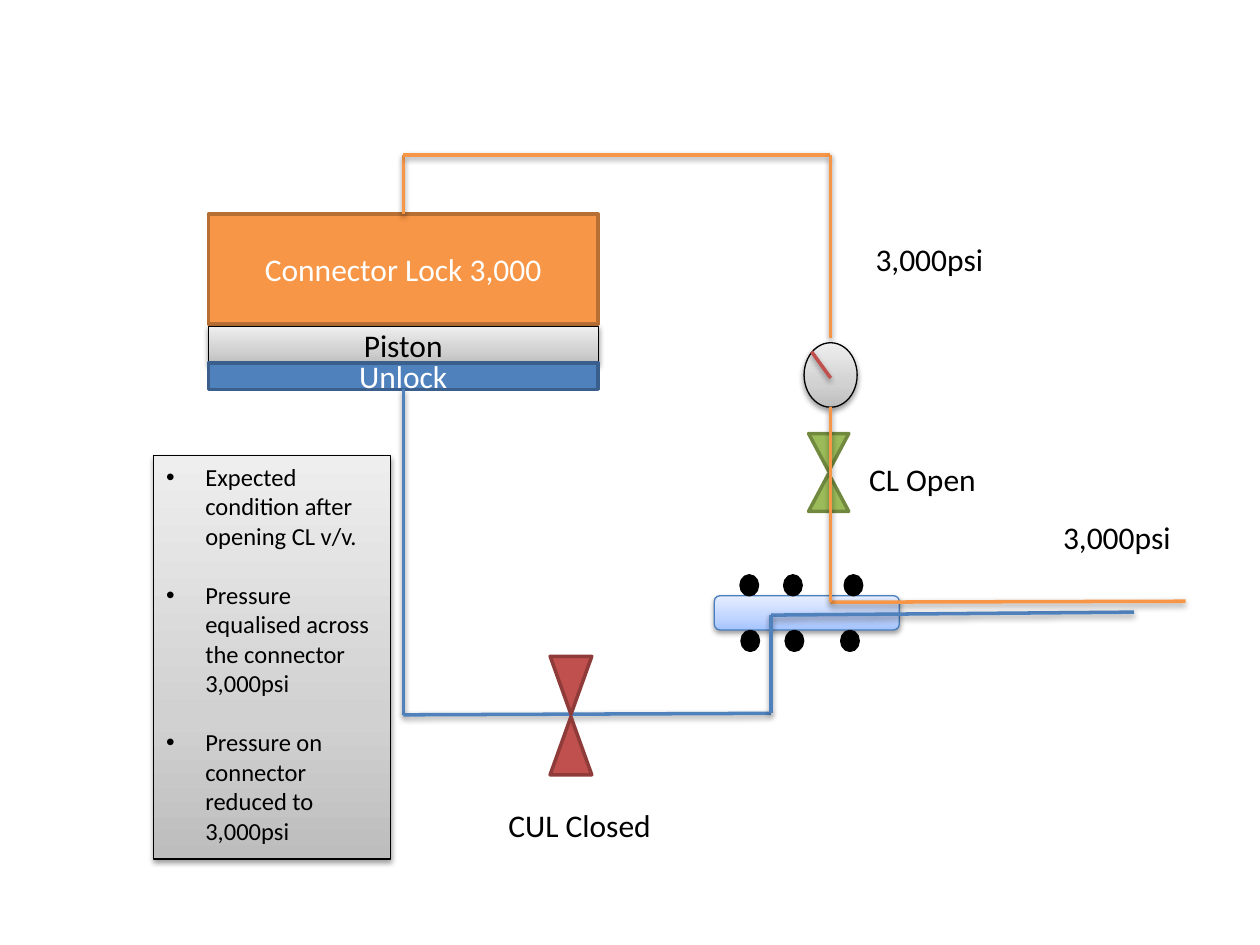
from lxml import etree
from pptx import Presentation
from pptx.dml.color import RGBColor
from pptx.enum.shapes import MSO_CONNECTOR, MSO_SHAPE
from pptx.enum.text import MSO_ANCHOR, MSO_AUTO_SIZE, PP_ALIGN
from pptx.oxml import parse_xml
from pptx.oxml.ns import qn
from pptx.util import Cm, Pt

RECTANGLE, ROUNDED = MSO_SHAPE.RECTANGLE, MSO_SHAPE.ROUNDED_RECTANGLE
ELLIPSE, TRIANGLE = MSO_SHAPE.OVAL, MSO_SHAPE.ISOSCELES_TRIANGLE
STRAIGHT = MSO_CONNECTOR.STRAIGHT
LEFT, CENTER = PP_ALIGN.LEFT, PP_ALIGN.CENTER
TOP, MIDDLE = MSO_ANCHOR.TOP, MSO_ANCHOR.MIDDLE
TOP_SIDE, BOTTOM_SIDE = 0, 2
FONT = "Calibri"
NAMESPACE = 'xmlns:a="http://schemas.openxmlformats.org/drawingml/2006/main"'

COLORS = {
    "black": "000000", "white": "FFFFFF",
    "lock": "F79646", "lock_edge": "B76F34",
    "unlock": "4F81BD", "unlock_edge": "3A5F8C",
    "open": "9BBB59", "open_edge": "71893F",
    "closed": "C0504D", "closed_edge": "8E3B39",
    "manifold_edge": "4B7EBC",
}
# Gradient stops at 0, 35 and 100 percent, running upwards
GRADIENTS = {
    "metal": ("BDBDBD", "D1D1D1", "EEEEEE"),
    "pale_blue": ("A4C4FF", "BFD4FF", "E6EEFF"),
}


def rgb(name):
    return RGBColor.from_string(COLORS[name])


def add_shadow(shape):
    properties = shape._element.spPr
    effects = properties.find(qn("a:effectLst"))
    if effects is None:
        effects = etree.SubElement(properties, qn("a:effectLst"))
    effects.append(parse_xml(
        f'<a:outerShdw {NAMESPACE} blurRad="40000" dist="20000" dir="5400000" '
        'rotWithShape="0"><a:srgbClr val="000000"><a:alpha val="38000"/>'
        '</a:srgbClr></a:outerShdw>'))


def fill_gradient(shape, name):
    stops = "".join(
        f'<a:gs pos="{position}"><a:srgbClr val="{color}"/></a:gs>'
        for position, color in zip((0, 35000, 100000), GRADIENTS[name]))
    shape._element.spPr.find(qn("a:prstGeom")).addnext(parse_xml(
        f'<a:gradFill {NAMESPACE} rotWithShape="1"><a:gsLst>{stops}</a:gsLst>'
        '<a:lin ang="16200000" scaled="0"/></a:gradFill>'))


def add_part(slide, kind, box, fill, edge, line_width=2):
    """Add a shape; gradient-filled parts also cast a shadow."""
    shape = slide.shapes.add_shape(kind, *map(Cm, box))
    shape.shadow.inherit = False
    shape.line.color.rgb = rgb(edge)
    shape.line.width = Pt(line_width)
    if fill in GRADIENTS:
        fill_gradient(shape, fill)
        add_shadow(shape)
    else:
        shape.fill.solid()
        shape.fill.fore_color.rgb = rgb(fill)
    return shape


def add_line(slide, start, end, color):
    line = slide.shapes.add_connector(STRAIGHT, *map(Cm, (*start, *end)))
    line.line.color.rgb = rgb(color)
    line.line.width = Pt(2)
    add_shadow(line)
    return line


def add_pipe(slide, points, color):
    return [add_line(slide, start, end, color)
            for start, end in zip(points, points[1:])]


def write(paragraph, text, size=18, color="black", alignment=LEFT):
    paragraph.alignment = alignment
    run = paragraph.add_run()
    run.text = text
    run.font.name = FONT
    run.font.size = Pt(size)
    run.font.color.rgb = rgb(color)


def add_label(slide, left, top, text, alignment=LEFT):
    frame = slide.shapes.add_textbox(Cm(left), Cm(top), Cm(4.11), Cm(1.02)).text_frame
    frame.word_wrap = True
    frame.auto_size = MSO_AUTO_SIZE.SHAPE_TO_FIT_TEXT
    write(frame.paragraphs[0], text, alignment=alignment)


def add_stack(slide, left, top, width):
    """Lock chamber, piston and unlock chamber, from the top down."""
    layers = (
        ("Connector Lock 3,000", 0, 2.21, "lock", "lock_edge", 2, "white"),
        ("Piston", 2.26, 0.76, "metal", "black", 0.75, "black"),
        ("Unlock", 3, 0.53, "unlock", "unlock_edge", 2, "white"),
    )
    parts = []
    for text, offset, height, fill, edge, line_width, color in layers:
        part = add_part(slide, RECTANGLE, (left, top + offset, width, height),
                        fill, edge, line_width)
        part.text_frame.vertical_anchor = MIDDLE
        write(part.text_frame.paragraphs[0], text, color=color, alignment=CENTER)
        parts.append(part)
    return parts[0], parts[-1]


def add_gauge(slide, left, top, width, height):
    add_part(slide, ELLIPSE, (left, top, width, height), "metal", "black", 0.75)
    add_line(slide, (left + width / 2, top + 0.71), (left + 0.15, top + 0.18), "closed")


def add_valve(slide, left, top, width, height, state):
    """Two triangles that meet tip to tip."""
    half = (height - 0.05) / 2
    for offset, rotation in ((0, 180), (height - half, 0)):
        triangle = add_part(slide, TRIANGLE, (left, top + offset, width, half),
                            state, state + "_edge")
        triangle.rotation = rotation


def add_manifold(slide, left, top, width, height):
    add_part(slide, ROUNDED, (left, top, width, height),
             "pale_blue", "manifold_edge", 0.75)
    for row, columns in ((-0.4, (0.54, 1.42, 2.64)), (0.72, (0.56, 1.45, 2.57))):
        for column in columns:
            add_part(slide, ELLIPSE, (left + column, top + row, 0.33, 0.38),
                     "black", "black")


def add_notes_panel(slide, box, notes):
    panel = add_part(slide, RECTANGLE, box, "metal", "black", 0.75)
    frame = panel.text_frame
    frame.vertical_anchor = TOP
    for index, note in enumerate(notes):
        paragraph = frame.add_paragraph() if index else frame.paragraphs[0]
        write(paragraph, note, size=14)
        if index:
            paragraph.space_before = Pt(17)
        properties = paragraph._p.get_or_add_pPr()
        properties.set("marL", str(Cm(0.79)))
        properties.set("indent", str(-Cm(0.79)))
        etree.SubElement(properties, qn("a:buFont")).set("typeface", "Arial")
        etree.SubElement(properties, qn("a:buChar")).set("char", "•")


def main():
    presentation = Presentation()
    presentation.slide_width, presentation.slide_height = Cm(25.4), Cm(19.05)
    slide = presentation.slides.add_slide(presentation.slide_layouts[6])

    # Connector and the lock line down to the gauge
    lock, unlock = add_stack(slide, 4.2, 4.32, 7.86)
    lock_pipe = add_pipe(slide, [(8.13, 4.32), (8.13, 3.12), (16.74, 3.12),
                                 (16.74, 6.81)], "lock")
    lock_pipe[0].begin_connect(lock, TOP_SIDE)
    add_gauge(slide, 16.21, 6.91, 1.07, 1.3)

    # Unlock line, valves and manifold
    unlock_pipe = add_pipe(slide, [(8.13, 7.85), (8.13, 14.41), (15.54, 14.38)], "unlock")
    unlock_pipe[0].begin_connect(unlock, BOTTOM_SIDE)
    add_valve(slide, 16.3, 8.74, 0.81, 1.57, "open")
    add_valve(slide, 11.09, 13.23, 0.84, 2.39, "closed")
    add_manifold(slide, 14.4, 12.01, 3.73, 0.69)

    # Supply lines crossing the manifold
    add_pipe(slide, [(22.86, 12.34), (15.54, 12.4), (15.54, 14.38)], "unlock")
    add_pipe(slide, [(23.9, 12.12), (16.74, 12.14), (16.74, 8.2)], "lock")

    # Labels
    add_label(slide, 9.63, 16.13, "CUL Closed", CENTER)
    add_label(slide, 17.27, 9.14, "CL Open")
    add_label(slide, 17.4, 4.72, "3,000psi")
    add_label(slide, 21.18, 10.31, "3,000psi")

    add_notes_panel(slide, (3.1, 9.19, 4.78, 8.13), (
        "Expected condition after opening CL v/v.",
        "Pressure equalised across the connector 3,000psi",
        "Pressure on connector reduced to 3,000psi",
    ))
    presentation.save("out.pptx")


if __name__ == "__main__":
    main()
